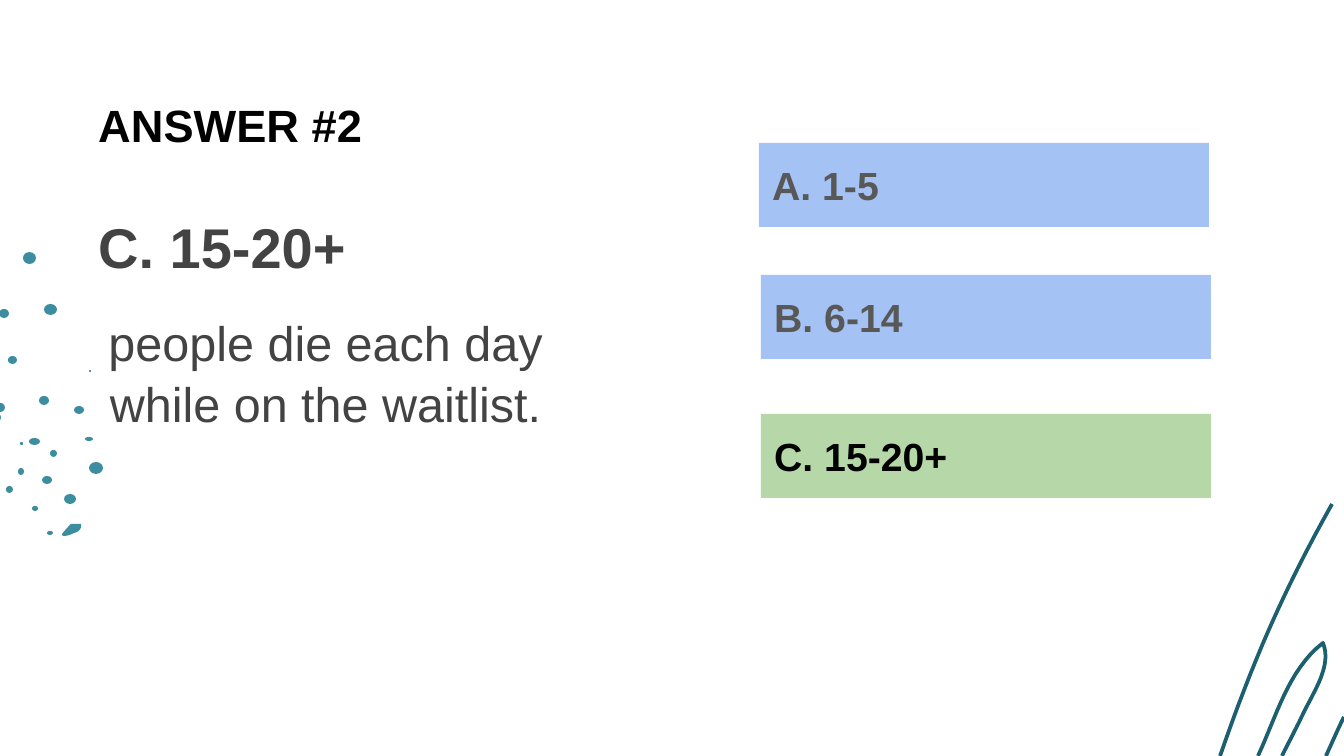
from lxml import etree
from pptx import Presentation
from pptx import util as u
from pptx.dml.color import RGBColor
from pptx.enum import shapes, text

PX = 914400 / 134.4
WIDTH, HEIGHT = 1344, 756
FONT = "Arial"
COLORS = {"dot": "3C8DA0", "swirl": "1C5F6F", "blue": "A4C2F4", "green": "B6D7A8",
          "black": "000000", "dark": "434343", "gray": "585858"}

# Content: paragraphs are (words, size, bold, color, alignment, space before)
TITLE = [("ANSWER #2", 24.2, True, "black", text.PP_ALIGN.LEFT, 0)]
ANSWER = [("C. 15-20+", 30, True, "dark", text.PP_ALIGN.LEFT, 0),
          ("people die each day while on the waitlist.", 26, False, "dark",
           text.PP_ALIGN.CENTER, 16)]
# Options: label, left, top, fill, text color
OPTIONS = [("A. 1-5", 759, 143, "blue", "gray"),
           ("B. 6-14", 761, 275, "blue", "gray"),
           ("C. 15-20+", 761, 414, "green", "black")]
OPTION_SIZE = (450, 84)

# Dots: left, top, width, height
DOTS = [(-16, 410, 17, 15), (20, 442, 3, 3), (18, 468, 6, 7), (32, 506, 6, 5),
        (47, 531, 6, 4), (64, 494, 12, 10), (42, 476, 10, 8), (6, 486, 7, 7),
        (50, 450, 7, 7), (29, 438, 11, 7), (39, 396, 10, 9), (-4, 403, 9, 9),
        (8, 356, 9, 8), (-1, 309, 10, 9), (89, 370, 2, 2), (74, 406, 10, 8),
        (85, 437, 8, 4), (89, 462, 14, 12), (44, 304, 13, 11), (23, 252, 13, 12)]
# Curves: a start point, then groups of two control points and an end point
LEAF = [(75, 524), (74, 524), (73, 524), (71, 524), (69, 526), (65, 530), (62, 534),
        (62, 535), (63, 536), (63, 536), (67, 536), (70, 535), (74, 533),
        (79, 532), (82, 528), (81, 524), (79, 524), (77, 524), (75, 524)]
SWIRLS = [
    [(1332, 504), (1282, 593), (1252, 664), (1220, 756)],
    [(1258, 756), (1276, 718), (1288, 670), (1323, 643),
     (1332, 665), (1315, 690), (1304, 712), (1297, 727), (1289, 742), (1282, 756)],
    [(1326, 756), (1332, 743), (1338, 729), (1344, 717)],
]


def px(value):
    return u.Emu(round(value * PX))


def rgb(name):
    return RGBColor.from_string(COLORS[name])


def paint(shape, color):
    shape.shadow.inherit = False
    shape.fill.solid()
    shape.fill.fore_color.rgb = rgb(color)
    shape.line.fill.background()


def curve_points(curve, steps=16):
    points = [curve[0]]
    for start in range(0, len(curve) - 1, 3):
        a, b, c, d = curve[start:start + 4]
        for step in range(1, steps + 1):
            t = step / steps
            weights = ((1 - t) ** 3, 3 * t * (1 - t) ** 2, 3 * t * t * (1 - t), t ** 3)
            points.append(tuple(sum(w * p[axis] for w, p in zip(weights, (a, b, c, d)))
                                for axis in (0, 1)))
    return points


def add_curve(slide, curve, close):
    points = [(px(x), px(y)) for x, y in curve_points(curve)]
    builder = slide.shapes.build_freeform(*points[0])
    builder.add_line_segments(points[1:], close=close)
    return builder.convert_to_shape()


def write(shape, paragraphs, anchor, spacing=1.0):
    frame = shape.text_frame
    frame.word_wrap = True
    frame.vertical_anchor = anchor
    frame.margin_left = frame.margin_right = u.Inches(0.1)
    frame.margin_top = frame.margin_bottom = u.Inches(0.1)
    for index, (words, size, bold, color, align, before) in enumerate(paragraphs):
        paragraph = frame.add_paragraph() if index else frame.paragraphs[0]
        paragraph.alignment = align
        paragraph.line_spacing = spacing
        if before:
            paragraph.space_before = u.Pt(before)
        run = paragraph.add_run()
        run.text = words
        run.font.name, run.font.size, run.font.bold = FONT, u.Pt(size), bold
        run.font.color.rgb = rgb(color)


presentation = Presentation()
presentation.slide_width, presentation.slide_height = px(WIDTH), px(HEIGHT)
slide = presentation.slides.add_slide(presentation.slide_layouts[6])

# Dots and leaf on the left edge
paint(add_curve(slide, LEAF, True), "dot")
for box in DOTS:
    paint(slide.shapes.add_shape(shapes.MSO_SHAPE.OVAL, *map(px, box)), "dot")

# Swirl strokes in the corner
for curve in SWIRLS:
    stroke = add_curve(slide, curve, False)
    stroke.shadow.inherit = False
    stroke.fill.background()
    stroke.line.color.rgb = rgb("swirl")
    stroke.line.width = u.Pt(2)

# Answer and title
write(slide.shapes.add_textbox(px(85), px(196), px(482), px(516)), ANSWER,
      text.MSO_ANCHOR.TOP, 1.05)
write(slide.shapes.add_textbox(px(85), px(82), px(1254), px(85)), TITLE,
      text.MSO_ANCHOR.MIDDLE)

# Option bars
for label, left, top, fill, color in OPTIONS:
    bar = slide.shapes.add_shape(shapes.MSO_SHAPE.RECTANGLE, px(left), px(top),
                                 *map(px, OPTION_SIZE))
    paint(bar, fill)
    write(bar, [(label, 21, True, color, text.PP_ALIGN.LEFT, 0)], text.MSO_ANCHOR.MIDDLE)

presentation.save("out.pptx")
